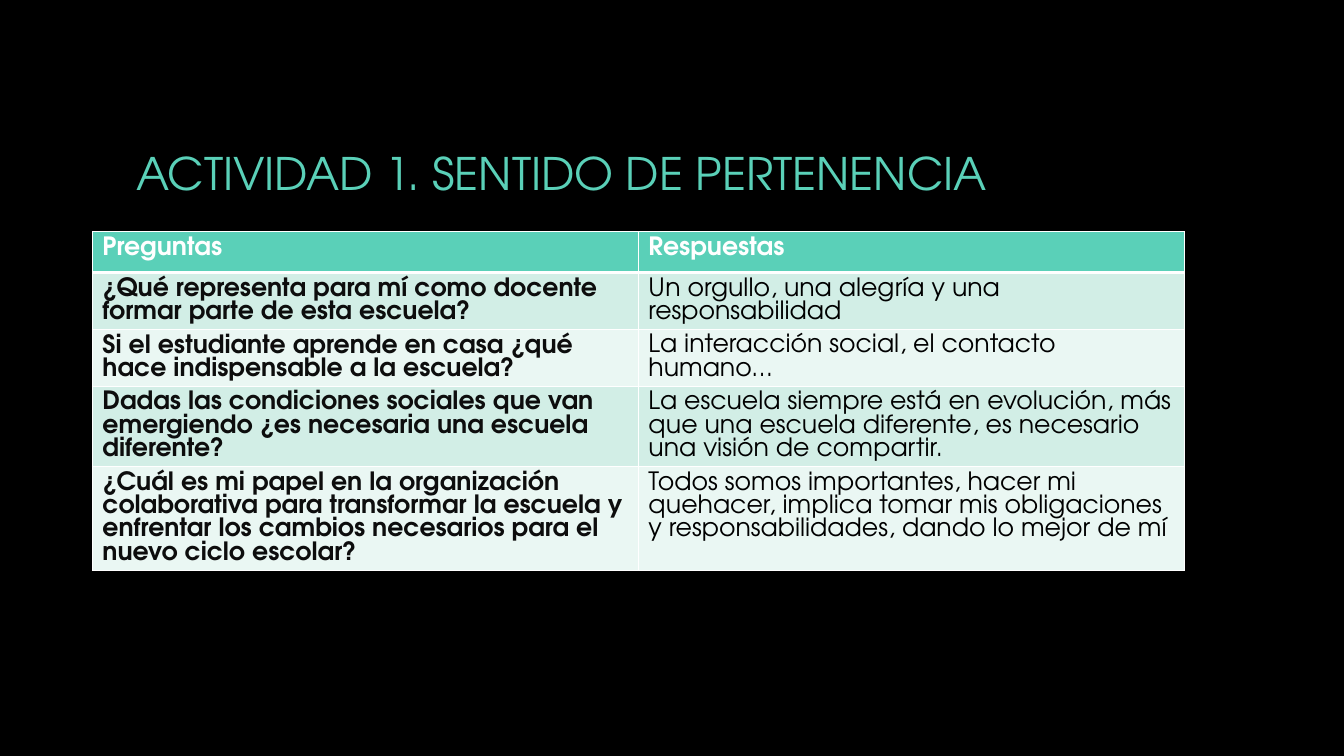
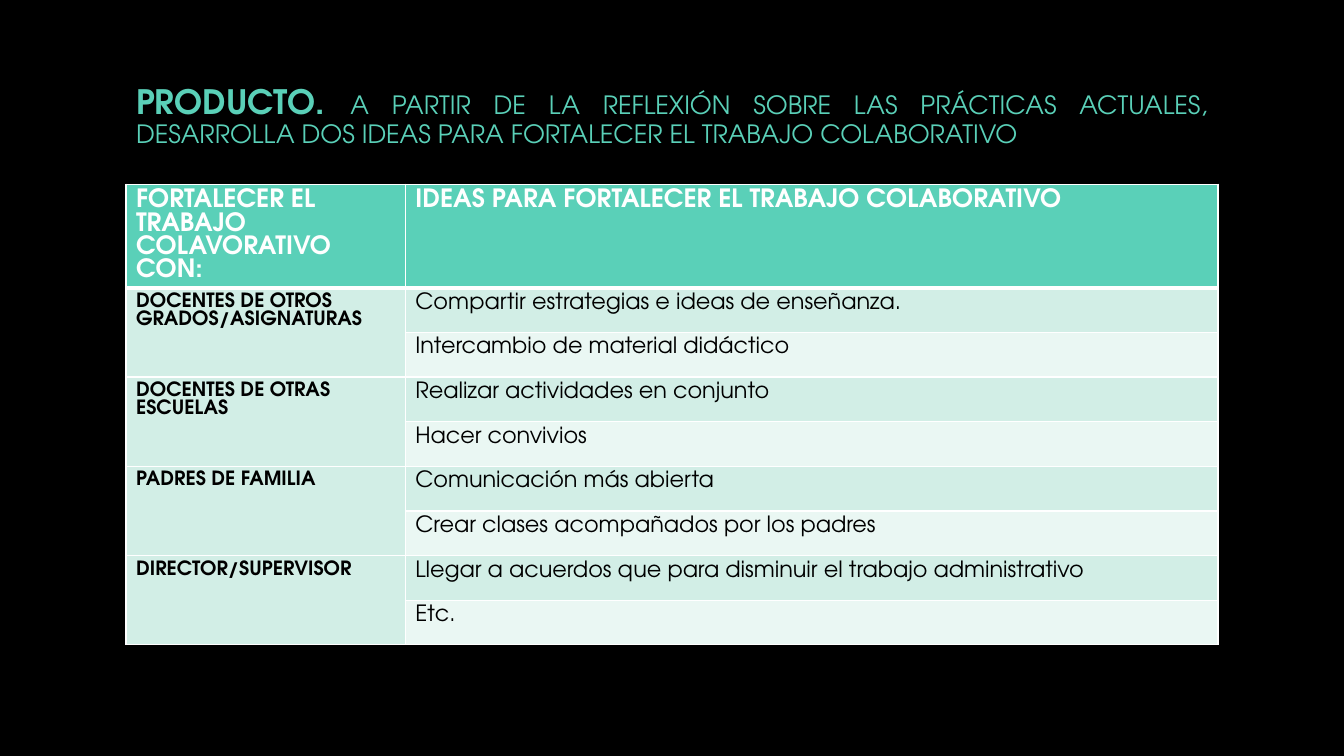
from lxml import etree
from pptx import Presentation
from pptx.dml.color import RGBColor
from pptx.enum.text import MSO_ANCHOR, MSO_AUTO_SIZE, PP_ALIGN
from pptx.oxml.ns import qn
from pptx.util import Pt

COLORS = {
    "background": "000000",
    "accent": "5AD0B8",
    "band_dark": "D2EEE6",
    "band_light": "EAF7F3",
    "white": "FFFFFF",
    "black": "000000",
    "charcoal": "0D0D0D",
}
FONT = "TeX Gyre Adventor"
TABLE_LEADING = 0.93

QUESTIONS = [
    ("Preguntas", "Respuestas"),
    ("¿Qué representa para mí como docente formar parte de esta escuela?",
     "Un orgullo, una alegría y una responsabilidad"),
    ("Si el estudiante aprende en casa ¿qué hace indispensable a la escuela?",
     "La interacción social, el contacto humano…"),
    ("Dadas las condiciones sociales que van emergiendo ¿es necesaria una "
     "escuela diferente?",
     "La escuela siempre está en evolución, más que una escuela diferente, "
     "es necesario una visión de compartir."),
    ("¿Cuál es mi papel en la organización colaborativa para transformar la "
     "escuela y enfrentar los cambios necesarios para el nuevo ciclo escolar?",
     "Todos somos importantes, hacer mi quehacer, implica tomar mis "
     "obligaciones y responsabilidades, dando lo mejor de mí"),
]

IDEAS_HEADER = ("FORTALECER EL TRABAJO COLAVORATIVO CON:",
                "IDEAS PARA FORTALECER EL TRABAJO COLABORATIVO")
IDEAS = {
    "DOCENTES DE OTROS GRADOS/ASIGNATURAS": (
        "Compartir estrategias e ideas de enseñanza.",
        "Intercambio de material didáctico"),
    "DOCENTES DE OTRAS ESCUELAS": (
        "Realizar actividades en conjunto",
        "Hacer convivios"),
    "PADRES DE FAMILIA": (
        "Comunicación más abierta",
        "Crear clases acompañados por los padres"),
    "DIRECTOR/SUPERVISOR": (
        "Llegar a acuerdos que para disminuir el trabajo administrativo",
        "Etc."),
}


def rgb(name):
    return RGBColor.from_string(COLORS[name])


def add_run(paragraph, text, size, color, bold=False):
    run = paragraph.add_run()
    run.text = text
    run.font.name = FONT
    run.font.size = Pt(size)
    run.font.bold = bold
    run.font.color.rgb = rgb(color)


def place_title(slide, box, runs, align=PP_ALIGN.LEFT, leading=1.0):
    """Fill the title placeholder with (text, size, bold) runs."""
    title = slide.shapes.title
    title.left, title.top, title.width, title.height = map(Pt, box)
    frame = title.text_frame
    frame.word_wrap = True
    frame.auto_size = MSO_AUTO_SIZE.NONE
    frame.vertical_anchor = MSO_ANCHOR.MIDDLE
    paragraph = frame.paragraphs[0]
    paragraph.alignment = align
    paragraph.line_spacing = leading
    for text, size, bold in runs:
        add_run(paragraph, text, size, "accent", bold)


def set_borders(cell, row):
    """White rules, with a thick one between the header and the body."""
    props = cell._tc.get_or_add_tcPr()
    widths = {"L": 1, "R": 1, "T": 3 if row == 1 else 1, "B": 3 if row == 0 else 1}
    for side, width in widths.items():
        line = etree.SubElement(props, qn(f"a:ln{side}"), w=str(Pt(width)))
        fill = etree.SubElement(line, qn("a:solidFill"))
        etree.SubElement(fill, qn("a:srgbClr"), val=COLORS["white"])


def place_table(slide, left, top, rows, col_widths, row_heights, sizes, label_color):
    """Draw rows of text; a None label joins the label cell above.

    sizes gives the text size of the header, the labels and the answers.
    """
    header_size, label_size, answer_size = sizes
    table = slide.shapes.add_table(
        len(rows), len(col_widths), Pt(left), Pt(top),
        Pt(sum(col_widths)), Pt(sum(row_heights))).table
    for column, width in zip(table.columns, col_widths):
        column.width = Pt(width)
    for table_row, height in zip(table.rows, row_heights):
        table_row.height = Pt(height)

    for r, texts in enumerate(rows):
        band = "accent" if r == 0 else "band_dark" if r % 2 else "band_light"
        for c, text in enumerate(texts):
            cell = table.cell(r, c)
            set_borders(cell, r)
            cell.fill.solid()
            cell.fill.fore_color.rgb = rgb(band)
            if text is None:
                table.cell(r - 1, c).merge(cell)
                continue
            if r == 0:
                size, color = header_size, "white"
            elif c == 0:
                size, color = label_size, label_color
            else:
                size, color = answer_size, "black"
            paragraph = cell.text_frame.paragraphs[0]
            paragraph.line_spacing = Pt(round(size * TABLE_LEADING, 1))
            add_run(paragraph, text, size, color, bold=r == 0 or c == 0)


def build_questions(slide):
    place_title(slide, (90, 48, 780, 150),
                [("ACTIVIDAD 1. SENTIDO DE PERTENENCIA", 32, False)])
    place_table(slide, 66, 165.5, QUESTIONS, (390, 390),
                [29.2] * len(QUESTIONS), (18, 18, 18), "charcoal")


def build_ideas(slide):
    place_title(slide, (90, 66, 780, 36), [
        ("PRODUCTO. ", 24, True),
        ("A PARTIR DE LA REFLEXIÓN SOBRE LAS PRÁCTICAS ACTUALES, DESARROLLA "
         "DOS IDEAS PARA FORTALECER EL TRABAJO COLABORATIVO", 18, False),
    ], PP_ALIGN.JUSTIFY, 0.9)
    rows = [IDEAS_HEADER]
    for group, (first, second) in IDEAS.items():
        rows += [(group, first), (None, second)]
    place_table(slide, 90, 131.5, rows, (199.5, 580.5),
                [64] + [31.9] * (len(rows) - 1), (18, 14, 16), "black")


def main():
    deck = Presentation()
    deck.slide_width, deck.slide_height = Pt(960), Pt(540)
    background = deck.slide_master.background.fill
    background.solid()
    background.fore_color.rgb = rgb("background")
    title_only = deck.slide_layouts[5]
    for build in (build_questions, build_ideas):
        build(deck.slides.add_slide(title_only))
    deck.save("out.pptx")


if __name__ == "__main__":
    main()
